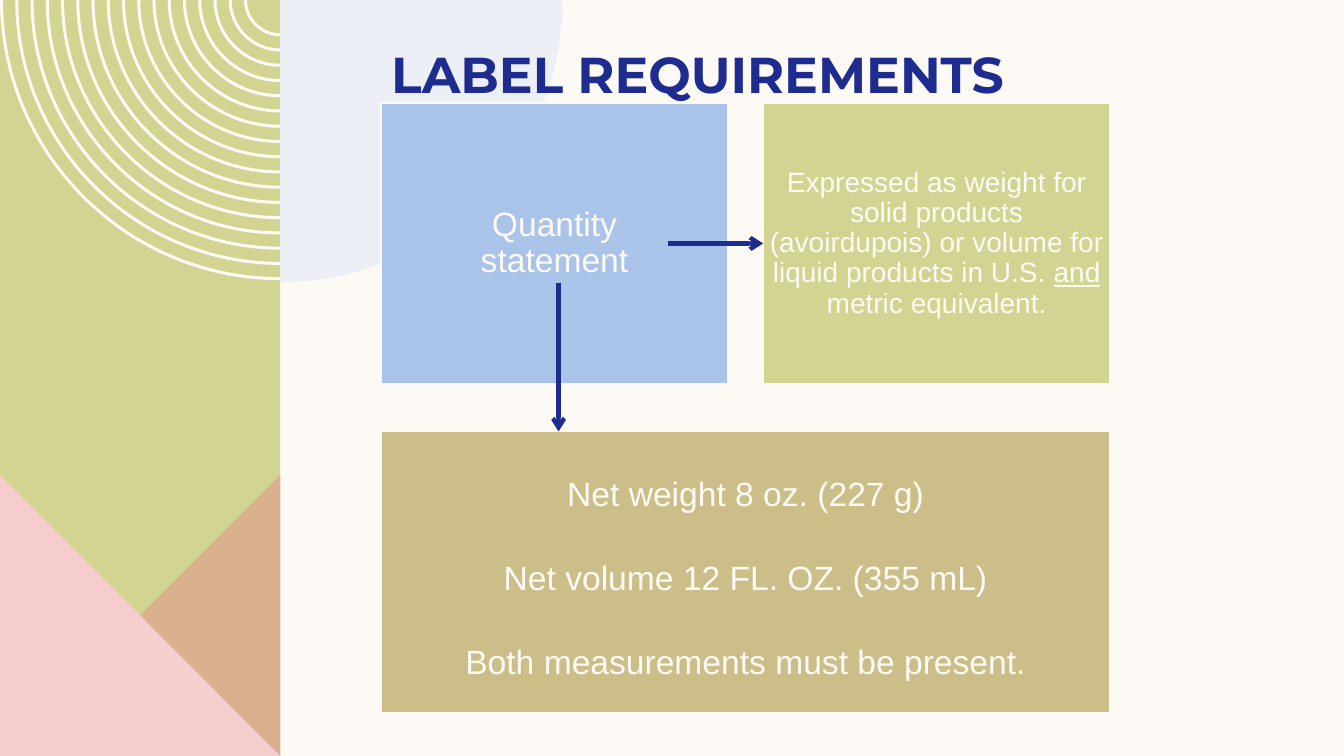
from lxml import etree
from pptx import Presentation
from pptx.dml.color import RGBColor
from pptx.enum import shapes, text
from pptx.oxml.ns import qn
from pptx.util import Inches, Pt

CREAM, NAVY, GREEN = "FDFAF6", "1F2C8F", "D2D592"
PANEL_W = 2.78
BOX_X, BOX_W, BOX_H = 3.78, 3.44, 2.79
RIGHT_X, TOP_Y, BOTTOM_Y = 7.57, 1.02, 4.28


def color(value):
    return RGBColor.from_string(value)


def paint(sp, fill, alpha=None):
    sp.shadow.inherit = False
    sp.fill.solid()
    sp.fill.fore_color.rgb = color(fill)
    sp.line.fill.background()
    if alpha:
        rgb = sp.fill._xPr.find(".//" + qn("a:srgbClr"))
        etree.SubElement(rgb, qn("a:alpha"), val=str(alpha * 1000))


def quarter(radius):
    """Bezier points of a quarter arc around the panel's top right corner."""
    k = 0.55 * radius
    return [(PANEL_W - radius, 0), (PANEL_W - radius, k),
            (PANEL_W - k, radius), (PANEL_W, radius)]


def bend(sp):
    """Turn each run of three segments into a curve; every fourth stays straight."""
    i, curve = 0, None
    for node in list(sp._element.iter(qn("a:moveTo"), qn("a:lnTo"))):
        if node.tag == qn("a:moveTo"):
            i = 0
            continue
        if i % 4 == 0:
            curve = etree.Element(qn("a:cubicBezTo"))
            node.addprevious(curve)
        if i % 4 < 3:
            curve.append(node[0])
            node.getparent().remove(node)
        i += 1


def add_outline(slide, contours, fill, alpha=None, curved=False):
    points = [[(Inches(x), Inches(y)) for x, y in c] for c in contours]
    builder = slide.shapes.build_freeform(*points[0][0], scale=1.0)
    for i, contour in enumerate(points):
        if i:
            builder.move_to(*contour[0])
        builder.add_line_segments(contour[1:], close=True)
    sp = builder.convert_to_shape()
    if curved:
        bend(sp)
    paint(sp, fill, alpha)


def format_run(r, size, font, rgb):
    r.font.size = Pt(size)
    r.font.name = font
    r.font.color.rgb = color(rgb)


def add_box(slide, x, y, w, fill, paragraphs, size, line_width=1.5, gap=0, top=None):
    """Box of centred text; each paragraph is a list of run texts."""
    sp = slide.shapes.add_shape(shapes.MSO_SHAPE.RECTANGLE, Inches(x), Inches(y),
                                Inches(w), Inches(BOX_H))
    paint(sp, fill)
    sp.line.color.rgb = color(CREAM)
    sp.line.width = Pt(line_width)
    tf = sp.text_frame
    tf.word_wrap = True
    tf.margin_left = tf.margin_right = tf.margin_top = tf.margin_bottom = Inches(0.05)
    tf.vertical_anchor = text.MSO_ANCHOR.MIDDLE
    if top:
        tf.vertical_anchor = text.MSO_ANCHOR.TOP
        tf.margin_top = Inches(top)
    for i, parts in enumerate(paragraphs):
        p = tf.add_paragraph() if i else tf.paragraphs[0]
        p.alignment = text.PP_ALIGN.CENTER
        p.line_spacing = 0.9
        p.space_after = Pt(gap)
        p.text = parts[0]
        for part in parts[1:]:
            p.add_run().text = part
        for r in p.runs:
            format_run(r, size, "Arial", CREAM)
    return sp


def add_arrow(slide, x1, y1, x2, y2):
    line = slide.shapes.add_connector(shapes.MSO_CONNECTOR.STRAIGHT, Inches(x1),
                                      Inches(y1), Inches(x2), Inches(y2))
    line.line.color.rgb = color(NAVY)
    line.line.width = Pt(3)
    etree.SubElement(line.line._get_or_add_ln(), qn("a:tailEnd"), type="arrow")
    etree.SubElement(line._element.spPr, qn("a:effectLst"))
    return line


def add_decor(slide):
    panel = slide.shapes.add_shape(shapes.MSO_SHAPE.RECTANGLE, 0, 0,
                                   Inches(PANEL_W), Inches(7.5))
    paint(panel, GREEN)

    # Seventeen evenly spaced rings
    radii = [0.36 + (PANEL_W - 0.36) / 16 * i for i in range(17)]
    rings = [quarter(r) + quarter(r - 0.03)[::-1] for r in radii]
    add_outline(slide, rings, CREAM, curved=True)

    # Triangles at the bottom, pale quarter disc at the top
    add_outline(slide, [[(PANEL_W, 4.71), (PANEL_W, 7.5), (0, 7.5)]], "DE8C8C", 50)
    add_outline(slide, [[(0, 4.71), (PANEL_W, 7.5), (0, 7.5)]], "F5CDCE")
    disc = [(2 * PANEL_W - x, y) for x, y in quarter(2.8)]
    add_outline(slide, [disc + [(PANEL_W, 0)]], "DDE7F6", 50, curved=True)


def set_title(slide, wording):
    title = slide.shapes.title
    slide.shapes._spTree.append(title._element)  # in front of the decoration
    title.left, title.top = Inches(3.78), Inches(0.41)
    title.width, title.height = Inches(8.71), Inches(0.64)
    tf = title.text_frame
    tf.text = wording
    tf.margin_top = tf.margin_bottom = 0
    tf.vertical_anchor = text.MSO_ANCHOR.MIDDLE
    p = tf.paragraphs[0]
    p.alignment = text.PP_ALIGN.LEFT
    format_run(p.runs[0], 36, "Montserrat", NAVY)
    p.runs[0].font.bold = True


def main():
    prs = Presentation()
    prs.slide_width, prs.slide_height = Inches(13.33), Inches(7.5)
    slide = prs.slides.add_slide(prs.slide_layouts[5])
    slide.background.fill.solid()
    slide.background.fill.fore_color.rgb = color(CREAM)
    add_decor(slide)
    set_title(slide, "LABEL REQUIREMENTS")

    # Boxes
    add_box(slide, BOX_X, TOP_Y, BOX_W, "AAC3E8", [["Quantity\vstatement"]], 24)
    expressed = add_box(slide, RIGHT_X, TOP_Y, BOX_W, GREEN, [[
        "Expressed as weight for solid products (avoirdupois) or volume for "
        "liquid products in U.S. ", "and", " metric equivalent."]], 20, line_width=1)
    expressed.text_frame.paragraphs[0].runs[1].font.underline = True
    add_box(slide, BOX_X, BOTTOM_Y, RIGHT_X + BOX_W - BOX_X, "CCBE89",
            [["Net weight 8 oz. (227 g)"], ["Net volume 12 FL. OZ. (355 mL)"],
             ["Both measurements must be present."]], 24, gap=34, top=0.46)

    # Arrows
    middle = TOP_Y + BOX_H / 2
    add_arrow(slide, 6.63, middle, RIGHT_X, middle).end_connect(expressed, 1)
    add_arrow(slide, 5.54, 2.81, 5.54, BOTTOM_Y)

    prs.save("out.pptx")


if __name__ == "__main__":
    main()
